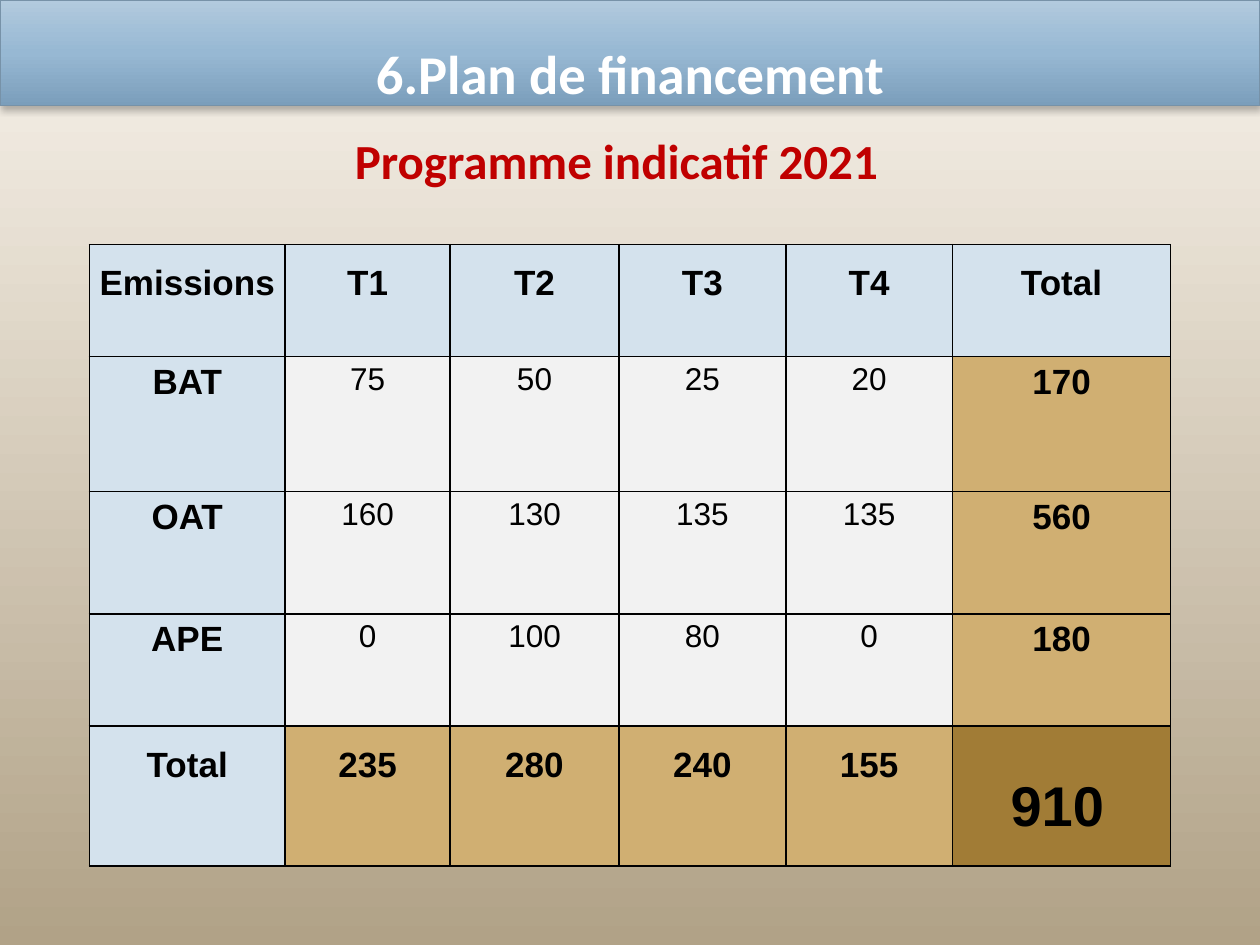
from copy import deepcopy

from lxml.etree import SubElement
from pptx import Presentation
from pptx.dml.color import RGBColor
from pptx.enum.text import MSO_ANCHOR, MSO_AUTO_SIZE, PP_ALIGN
from pptx.oxml.ns import qn
from pptx.util import Cm, Pt

BLACK = RGBColor(0x00, 0x00, 0x00)
WHITE = RGBColor(0xFF, 0xFF, 0xFF)
RED = RGBColor(0xC0, 0x00, 0x00)
PALE_BLUE = RGBColor(0xD4, 0xE2, 0xED)
PALE_GREY = RGBColor(0xF2, 0xF2, 0xF2)
SAND = RGBColor(0xD0, 0xAF, 0x72)
BRONZE = RGBColor(0xA1, 0x7C, 0x36)
BAR_LINE = RGBColor(0x77, 0x92, 0xA8)
BAR_COLORS = [RGBColor(0xB2, 0xCA, 0xDE), RGBColor(0x97, 0xB8, 0xD3), RGBColor(0x7B, 0x9E, 0xBB)]
BACKGROUND_COLORS = [RGBColor(0xF8, 0xF3, 0xEB), RGBColor(0xB1, 0xA2, 0x87)]

COLUMN_WIDTHS = [3.95, 3.32, 3.41, 3.36, 3.36, 4.4]
ROW_HEIGHTS = [2.26, 2.72, 2.47, 2.26, 2.82]
QUARTERS = ["T1", "T2", "T3", "T4"]
EMISSIONS = {
    "BAT": [75, 50, 25, 20],
    "OAT": [160, 130, 135, 135],
    "APE": [0, 100, 80, 0],
}


def write_text(text_frame, text, font="Arial", size=20, color=BLACK, bold=True, spacing=None):
    paragraph = text_frame.paragraphs[0]
    paragraph.alignment = PP_ALIGN.CENTER
    if spacing:
        paragraph.line_spacing = spacing
    run = paragraph.add_run()
    run.text = text
    run.font.name = font
    run.font.size = Pt(size)
    run.font.bold = bold
    run.font.color.rgb = color


def set_gradient(fill, owner, colors):
    fill.gradient()
    fill.gradient_angle = 270
    stop_list = next(owner.iter(qn("a:gsLst")))
    while len(stop_list) < len(colors):
        stop_list.append(deepcopy(stop_list[0]))
    for index, (stop, color) in enumerate(zip(fill.gradient_stops, colors)):
        stop.color.rgb = color
        stop.position = index / (len(colors) - 1)


def add_shadow(shape):
    shape.shadow.inherit = False
    effects = next(shape.element.iter(qn("a:effectLst")))
    shadow = SubElement(effects, qn("a:outerShdw"), blurRad=str(Pt(4)), dist=str(Pt(2)),
                        dir="5400000", rotWithShape="0")
    color = SubElement(shadow, qn("a:srgbClr"), val=str(BLACK))
    SubElement(color, qn("a:alpha"), val="28000")


def format_title(slide, text):
    title = slide.shapes.title
    title.left, title.top, title.width, title.height = Cm(0), Cm(0), Cm(25.4), Cm(2.13)
    set_gradient(title.fill, title.element, BAR_COLORS)
    title.line.color.rgb = BAR_LINE
    title.line.width = Pt(0.75)
    add_shadow(title)
    text_frame = title.text_frame
    text_frame.auto_size = MSO_AUTO_SIZE.NONE
    text_frame.word_wrap = True
    text_frame.vertical_anchor = MSO_ANCHOR.BOTTOM
    text_frame.margin_left = text_frame.margin_right = text_frame.margin_bottom = 0
    text_frame.margin_top = Cm(0.13)
    write_text(text_frame, text, font="Calibri", size=31.2, color=WHITE, spacing=1.0)


def add_text(slide, left, top, width, height, text, **text_format):
    box = slide.shapes.add_textbox(Cm(left), Cm(top), Cm(width), Cm(height))
    box.text_frame.word_wrap = True
    box.text_frame.auto_size = MSO_AUTO_SIZE.SHAPE_TO_FIT_TEXT
    write_text(box.text_frame, text, **text_format)


def format_cell(cell, fill_color):
    properties = cell._tc.get_or_add_tcPr()
    for side in ("a:lnL", "a:lnR", "a:lnT", "a:lnB"):
        border = SubElement(properties, qn(side), w=str(Pt(1)))
        SubElement(SubElement(border, qn("a:solidFill")), qn("a:srgbClr"), val=str(BLACK))
    cell.fill.solid()
    cell.fill.fore_color.rgb = fill_color
    cell.margin_left = cell.margin_right = Cm(0.18)
    cell.margin_top = cell.margin_bottom = 0


def cell_color(row, column, last_row, last_column):
    if row == 0 or column == 0:
        return PALE_BLUE
    if row == last_row and column == last_column:
        return BRONZE
    if row == last_row or column == last_column:
        return SAND
    return PALE_GREY


def add_emissions_table(slide, left, top):
    rows = [["Emissions", *QUARTERS, "Total"]]
    rows += [[name, *values, sum(values)] for name, values in EMISSIONS.items()]
    rows.append(["Total", *map(sum, zip(*EMISSIONS.values())), ""])
    last_row, last_column = len(rows) - 1, len(rows[0]) - 1
    table = slide.shapes.add_table(len(rows), len(rows[0]), Cm(left), Cm(top),
                                   Cm(sum(COLUMN_WIDTHS)), Cm(sum(ROW_HEIGHTS))).table
    for column, width in zip(table.columns, COLUMN_WIDTHS):
        column.width = Cm(width)
    for row, height in zip(table.rows, ROW_HEIGHTS):
        row.height = Cm(height)
    for row, values in enumerate(rows):
        spacing = 1.5 if row in (0, last_row) else 1.15
        for column, value in enumerate(values):
            cell = table.cell(row, column)
            color = cell_color(row, column, last_row, last_column)
            format_cell(cell, color)
            if value != "":
                is_detail = color == PALE_GREY
                write_text(cell.text_frame, str(value), size=18 if is_detail else 20,
                           bold=not is_detail, spacing=spacing)


def main():
    presentation = Presentation()
    presentation.slide_width, presentation.slide_height = Cm(25.4), Cm(19.05)
    slide = presentation.slides.add_slide(presentation.slide_layouts[5])
    set_gradient(slide.background.fill, slide.element, BACKGROUND_COLORS)
    format_title(slide, "6.Plan de financement")
    add_text(slide, 2.9, 2.51, 19.05, 1.45, "Programme indicatif 2021",
             font="Calibri", size=28, color=RED)
    add_emissions_table(slide, 1.8, 4.93)
    grand_total = sum(map(sum, EMISSIONS.values()))
    add_text(slide, 19.51, 14.73, 3.61, 2.08, str(grand_total), size=32, spacing=1.5)
    presentation.save("out.pptx")


if __name__ == "__main__":
    main()
